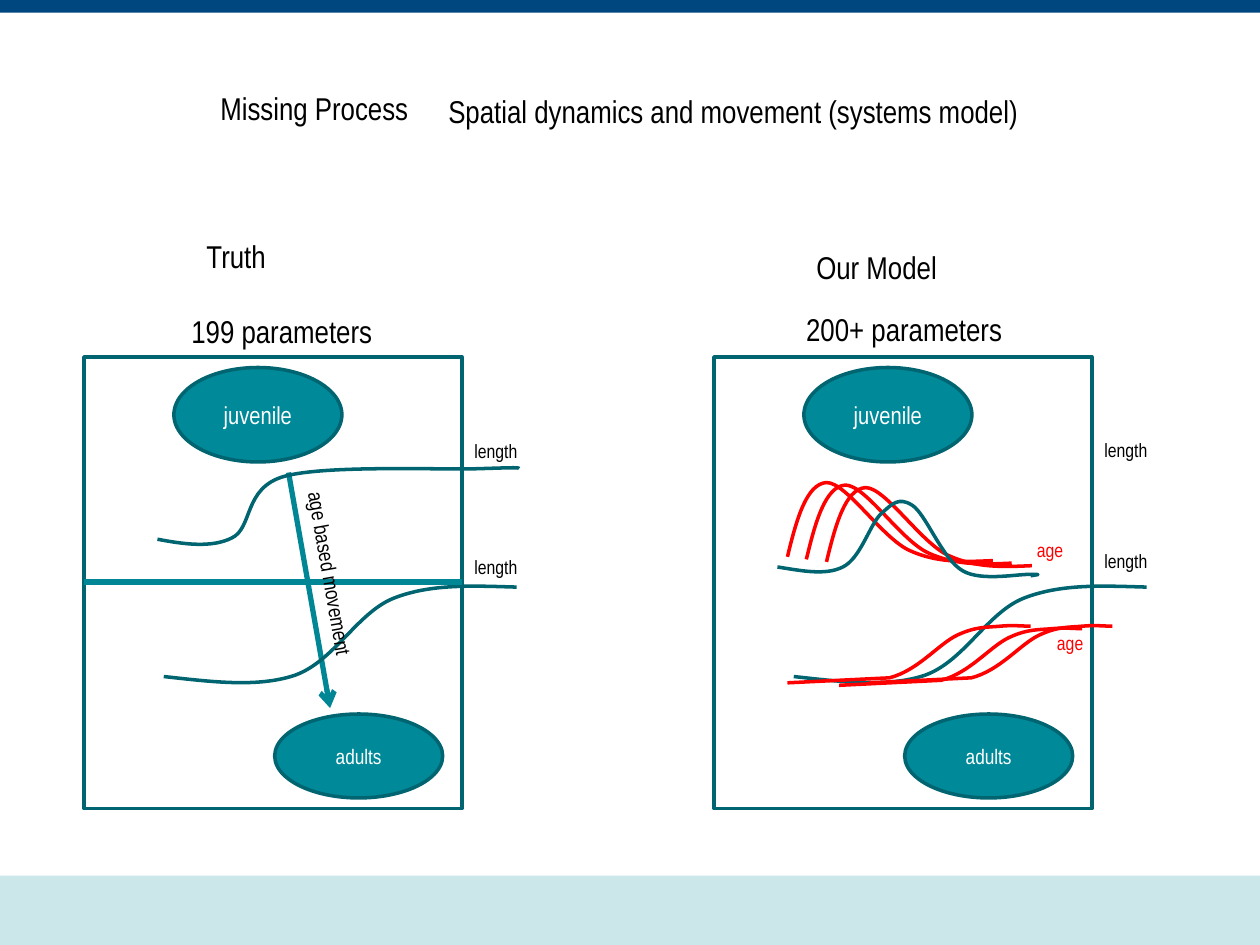
from dataclasses import dataclass

from lxml.etree import SubElement
from pptx import Presentation
from pptx.dml.color import RGBColor
from pptx.enum.shapes import MSO_CONNECTOR, MSO_SHAPE
from pptx.enum.text import MSO_ANCHOR, MSO_AUTO_SIZE, PP_ALIGN
from pptx.oxml.ns import qn
from pptx.util import Inches, Pt

NAVY = RGBColor(0x00, 0x46, 0x7F)
PALE_TEAL = RGBColor(0xCC, 0xE7, 0xEA)
DARK_TEAL = RGBColor(0x00, 0x65, 0x70)
TEAL = RGBColor(0x00, 0x89, 0x98)
LINE_TEAL = RGBColor(0x00, 0x86, 0x95)
RED = RGBColor(0xFF, 0x00, 0x00)
BLACK = RGBColor(0x00, 0x00, 0x00)
WHITE = RGBColor(0xFF, 0xFF, 0xFF)
FONT = "Arial Narrow"
PANEL_SPACING = 5
PANEL_LEFT = 2 / 3
PANEL_WIDTH = 3
PANEL_RIGHT = PANEL_LEFT + PANEL_WIDTH
BOUND_STEPS = 40

Point = tuple[float, float]
Box = tuple[float, float, float, float]
Segment = tuple[Point, ...]


@dataclass(frozen=True)
class Label:
    text: str
    left: float
    top: float
    width: float
    height: float = 0.4
    size: int = 18
    color: RGBColor = BLACK
    rotation: int = 0


@dataclass(frozen=True)
class Curve:
    """A start point, then segments of one point (straight) or three (Bezier)."""
    segments: tuple[Segment, ...]
    color: RGBColor = DARK_TEAL
    shift: Point = (0, 0)


# Curve outlines
JUVENILE_TRUTH = (
    ((1.25, 4.28),),
    ((1.46, 4.32), (1.68, 4.35), (1.84, 4.27)),
    ((2.01, 4.19), (1.93, 3.87), (2.26, 3.78)),
    ((2.59, 3.69), (3.49, 3.73), (3.8, 3.72)),
    ((4.11, 3.71), (4.12, 3.71), (4.12, 3.72)))
ADULT_LENGTH = (
    ((1.3, 5.37),),
    ((1.67, 5.41), (2.04, 5.46), (2.34, 5.36)),
    ((2.65, 5.25), (2.83, 4.87), (3.12, 4.75)),
    ((3.42, 4.63), (3.76, 4.65), (4.1, 4.66)))
JUVENILE_MODEL = (
    ((6.17, 4.5),),
    ((6.36, 4.53), (6.55, 4.57), (6.69, 4.5)),
    ((6.83, 4.43), (6.9, 4.17), (6.99, 4.08)),
    ((7.08, 4), (7.13, 3.94), (7.24, 4.01)),
    ((7.35, 4.08), (7.48, 4.44), (7.64, 4.53)),
    ((7.79, 4.62), (8.1, 4.55), (8.19, 4.56)),
    ((8.28, 4.56), (8.23, 4.56), (8.18, 4.57)))
JUVENILE_AGE = (
    ((6.25, 4.42),),
    ((6.32, 4.13), (6.4, 3.84), (6.56, 3.83)),
    ((6.72, 3.83), (7, 4.27), (7.22, 4.37)),
    ((7.44, 4.47), (7.66, 4.46), (7.88, 4.45)))
ADULT_AGE = (
    ((6.25, 5.42),),
    ((7.06, 5.38),),
    ((7.29, 5.32), (7.45, 5.11), (7.6, 5.04)),
    ((7.75, 4.97), (7.84, 4.98), (7.94, 4.97)),
    ((8.04, 4.96), (8.11, 4.97), (8.18, 4.97)))

TRUTH_CURVES = [Curve(JUVENILE_TRUTH), Curve(ADULT_LENGTH)]
MODEL_CURVES = [
    Curve(ADULT_LENGTH, shift=(PANEL_SPACING, 0)),
    *(Curve(JUVENILE_AGE, RED, shift)
      for shift in ((0.15, 0.02), (0.31, 0.04), (0, 0))),
    *(Curve(ADULT_AGE, RED, shift)
      for shift in ((0.41, 0.02), (0.65, 0), (0, 0))),
    Curve(JUVENILE_MODEL),
]

LABELS = [
    Label("Missing Process", 1.65, 0.66, 1.82),
    Label("Spatial dynamics and movement (systems model)", 3.46, 0.68, 5.26),
    Label("Truth", 1.54, 1.83, 0.75),
    *(Label("length", PANEL_RIGHT + offset, top, 0.6, 0.29, 11)
      for offset, top in ((0, 3.44), (0, 4.36),
                          (PANEL_SPACING, 3.43), (PANEL_SPACING, 4.31))),
    Label("age based movement", 1.8, 4.48, 1.67, 0.3, 12, rotation=80),
    Label("Our Model", 6.38, 1.92, 1.31),
    *(Label("age", left, top, 0.42, 0.29, 11, RED)
      for left, top in ((8.13, 4.22), (8.29, 4.96))),
    Label("199 parameters", 1.42, 2.43, 1.82),
    Label("200+ parameters", 6.3, 2.41, 1.94),
]


def write_text(text_frame, text: str, *, size: int, color: RGBColor,
               align=PP_ALIGN.LEFT) -> None:
    paragraph = text_frame.paragraphs[0]
    paragraph.alignment = align
    run = paragraph.add_run()
    run.text = text
    run.font.name = FONT
    run.font.size = Pt(size)
    run.font.color.rgb = color


def style_shape(shape, fill: RGBColor | None, line: RGBColor | None) -> None:
    shape.shadow.inherit = False
    if fill is None:
        shape.fill.background()
    else:
        shape.fill.solid()
        shape.fill.fore_color.rgb = fill
    if line is None:
        shape.line.fill.background()
    else:
        shape.line.color.rgb = line
        shape.line.width = Pt(2)


def add_preset(slide, preset, box: Box, fill: RGBColor | None = None,
               line: RGBColor | None = None):
    shape = slide.shapes.add_shape(preset, *map(Inches, box))
    style_shape(shape, fill, line)
    return shape


def add_stage(slide, text: str, box: Box, size: int) -> None:
    shape = add_preset(slide, MSO_SHAPE.OVAL, box, TEAL, DARK_TEAL)
    shape.text_frame.vertical_anchor = MSO_ANCHOR.MIDDLE
    write_text(shape.text_frame, text, size=size, color=WHITE, align=PP_ALIGN.CENTER)


def add_panel(slide, offset: float) -> None:
    add_preset(slide, MSO_SHAPE.RECTANGLE,
               (PANEL_LEFT + offset, 17 / 6, PANEL_WIDTH, 43 / 12), line=DARK_TEAL)
    add_stage(slide, "adults", (2.18 + offset, 17 / 3, 4 / 3, 2 / 3), 12)
    add_stage(slide, "juvenile", (1.38 + offset, 35 / 12, 4 / 3, 0.75), 14)


def segment_samples(start: Point, segment: Segment) -> list[Point]:
    """Points along a segment, used to find how far the curve reaches."""
    if len(segment) == 1:
        return [start, segment[0]]
    corners = (start, *segment)
    samples = []
    for step in range(BOUND_STEPS + 1):
        t = step / BOUND_STEPS
        weights = ((1 - t) ** 3, 3 * t * (1 - t) ** 2, 3 * t ** 2 * (1 - t), t ** 3)
        samples.append((sum(w * x for w, (x, _) in zip(weights, corners)),
                        sum(w * y for w, (_, y) in zip(weights, corners))))
    return samples


def add_curve(slide, curve: Curve) -> None:
    segments = [tuple((x + curve.shift[0], y + curve.shift[1]) for x, y in segment)
                for segment in curve.segments]
    samples = [point for before, segment in zip(segments, segments[1:])
               for point in segment_samples(before[-1], segment)]
    xs, ys = zip(*samples)
    left, top = min(xs), min(ys)

    # The diagonal sets the frame; the curve then takes its place
    builder = slide.shapes.build_freeform(Inches(left), Inches(top))
    builder.add_line_segments([(Inches(max(xs)), Inches(max(ys)))], close=False)
    shape = builder.convert_to_shape()
    outline = next(shape._element.iter(qn("a:path")))
    for command in list(outline):
        outline.remove(command)
    for index, segment in enumerate(segments):
        tag = "a:moveTo" if index == 0 else "a:lnTo" if len(segment) == 1 else "a:cubicBezTo"
        command = SubElement(outline, qn(tag))
        for x, y in segment:
            SubElement(command, qn("a:pt"), x=str(Inches(x - left)), y=str(Inches(y - top)))
    style_shape(shape, None, curve.color)


def add_line(slide, start: Point, end: Point, arrow: bool = False) -> None:
    connector = slide.shapes.add_connector(
        MSO_CONNECTOR.STRAIGHT, *map(Inches, (*start, *end)))
    connector.line.color.rgb = LINE_TEAL
    connector.line.width = Pt(3)
    if arrow:
        SubElement(connector.line._get_or_add_ln(), qn("a:tailEnd"), type="arrow")
    SubElement(connector._element.spPr, qn("a:effectLst"))


def add_label(slide, label: Label) -> None:
    box = slide.shapes.add_textbox(
        *map(Inches, (label.left, label.top, label.width, label.height)))
    box.rotation = label.rotation
    box.text_frame.word_wrap = False
    box.text_frame.auto_size = MSO_AUTO_SIZE.SHAPE_TO_FIT_TEXT
    write_text(box.text_frame, label.text, size=label.size, color=label.color)


def main() -> None:
    presentation = Presentation()
    presentation.slide_width, presentation.slide_height = Inches(10), Inches(7.5)
    slide = presentation.slides.add_slide(presentation.slide_layouts[6])

    # Footer and header bands
    add_preset(slide, MSO_SHAPE.RECTANGLE, (0, 6.95, 10, 0.55), PALE_TEAL)
    add_preset(slide, MSO_SHAPE.RECTANGLE, (0, 0, 10, 0.1), NAVY)

    # Truth panel: two areas with movement between them
    add_panel(slide, 0)
    add_line(slide, (2.29, 3.75), (2.62, 5.62), arrow=True)
    for curve in TRUTH_CURVES:
        add_curve(slide, curve)
    add_line(slide, (PANEL_LEFT, 4.62), (PANEL_RIGHT, 4.62))

    # Model panel: one area
    add_panel(slide, PANEL_SPACING)
    for curve in MODEL_CURVES:
        add_curve(slide, curve)

    # Titles and labels
    for label in LABELS:
        add_label(slide, label)
    presentation.save("out.pptx")


if __name__ == "__main__":
    main()
